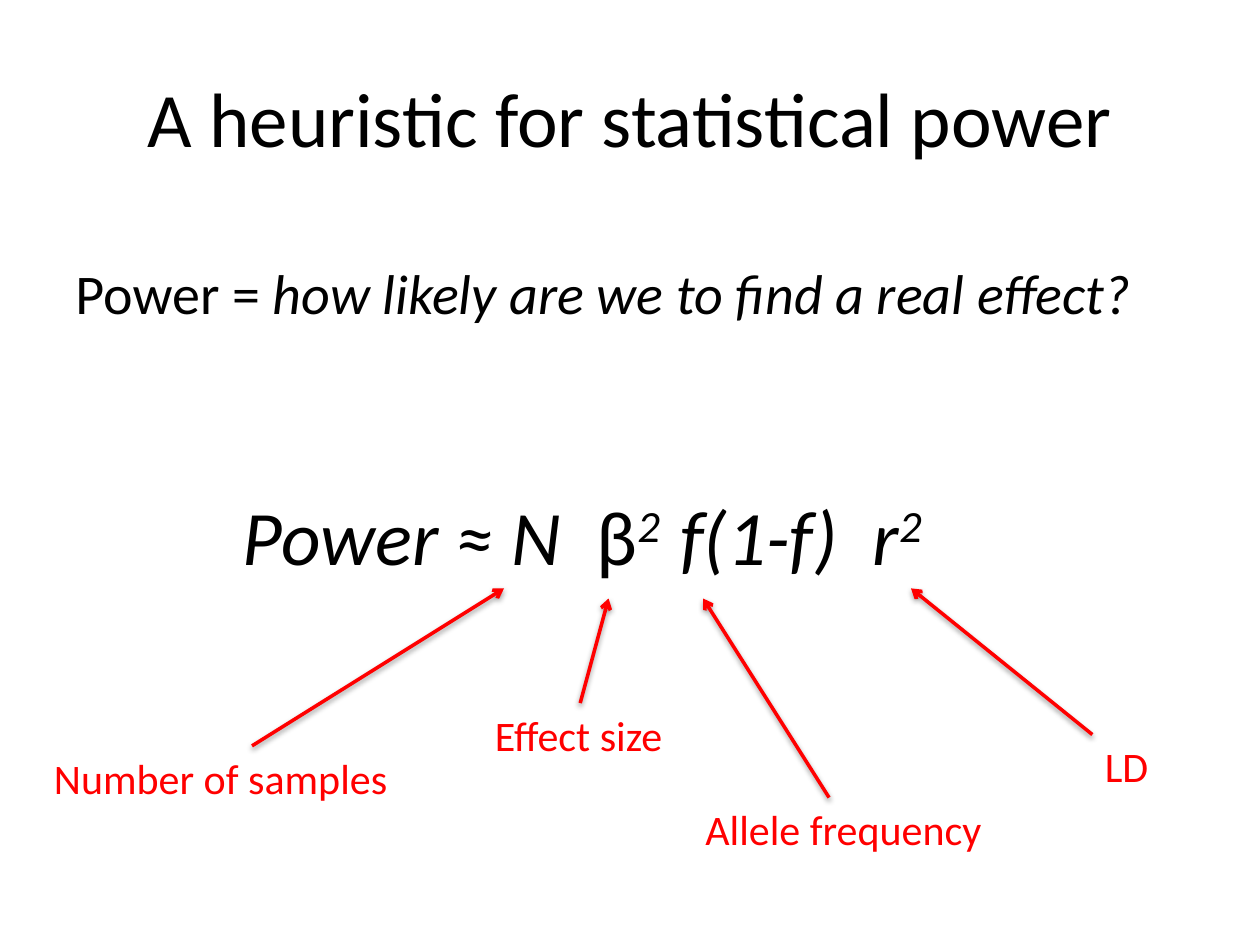
"""Build a slide that explains a heuristic for statistical power."""
import pptx
import pptx.dml.color
import pptx.enum.shapes
import pptx.enum.text
import pptx.oxml
import pptx.oxml.ns
import pptx.util
from pptx.util import Inches

COLORS = {"text": "000000", "callout": "FF0000"}
FONT = "Calibri"


def add_span(para, text, size, color="text", italic=False, superscript=False):
    span = para.add_run()
    span.text = text
    span.font.name = FONT
    span.font.size = pptx.util.Pt(size)
    span.font.italic = italic
    span.font.color.rgb = pptx.dml.color.RGBColor.from_string(COLORS[color])
    if superscript:
        span.font._element.set("baseline", "30000")


def add_box(page, left, top, width, height, wrap=True):
    box = page.shapes.add_textbox(Inches(left), Inches(top), Inches(width), Inches(height))
    box.text_frame.word_wrap = wrap
    return box


deck = pptx.Presentation()
deck.slide_width = Inches(10)
deck.slide_height = Inches(7.5)
page = deck.slides.add_slide(deck.slide_layouts.get_by_name("Title Only"))

title = page.shapes.title
title.left, title.top = Inches(0.5), Inches(0.3)
title.width, title.height = Inches(9), Inches(1.25)
title.text_frame.vertical_anchor = pptx.enum.text.MSO_ANCHOR.MIDDLE
title_para = title.text_frame.paragraphs[0]
title_para.alignment = pptx.enum.text.PP_ALIGN.CENTER
add_span(title_para, "A heuristic for statistical power", 44)

definition = add_box(page, 0.5, 2, 9, 1).text_frame.paragraphs[0]
add_span(definition, "Power = ", 32)
add_span(definition, "how likely are we to find a real effect?", 32, italic=True)

formula = add_box(page, 1.83, 3.83, 6.25, 1.14).text_frame.paragraphs[0]
for text, italic, superscript in [
    ("Power ≈ N  ", True, False),
    ("β", False, False),
    ("2  ", True, True),
    ("f(1-f)  r", True, False),
    ("2", True, True),
]:
    add_span(formula, text, 44, italic=italic, superscript=superscript)

callouts = [
    ("Number of samples", 0.33, 5.92, 2.87, (2, 5.92), (4, 4.67)),
    ("Effect size", 3.83, 5.58, 1.55, None, (4.83, 4.75)),
    ("Allele frequency", 5.5, 6.33, 2.42, (6.58, 6.33), (5.58, 4.75)),
    ("LD", 8.67, 5.83, 0.55, (8.67, 5.83), (7.23, 4.67)),
]
for text, left, top, width, start, tip in callouts:
    label = add_box(page, left, top, width, 0.5, wrap=False)
    label.text_frame.auto_size = pptx.enum.text.MSO_AUTO_SIZE.SHAPE_TO_FIT_TEXT
    add_span(label.text_frame.paragraphs[0], text, 24, "callout")

    start_x, start_y = start or (left + width / 2, top)
    arrow = page.shapes.add_connector(
        pptx.enum.shapes.MSO_CONNECTOR.STRAIGHT,
        Inches(start_x), Inches(start_y), Inches(tip[0]), Inches(tip[1]),
    )
    if start is None:
        arrow.begin_connect(label, 0)
    arrow.line.color.rgb = pptx.dml.color.RGBColor.from_string(COLORS["callout"])
    arrow.line.width = pptx.util.Pt(2)
    tail = pptx.oxml.parse_xml(f'<a:tailEnd {pptx.oxml.ns.nsdecls("a")} type="arrow"/>')
    arrow.line._get_or_add_ln().append(tail)

deck.save("out.pptx")
